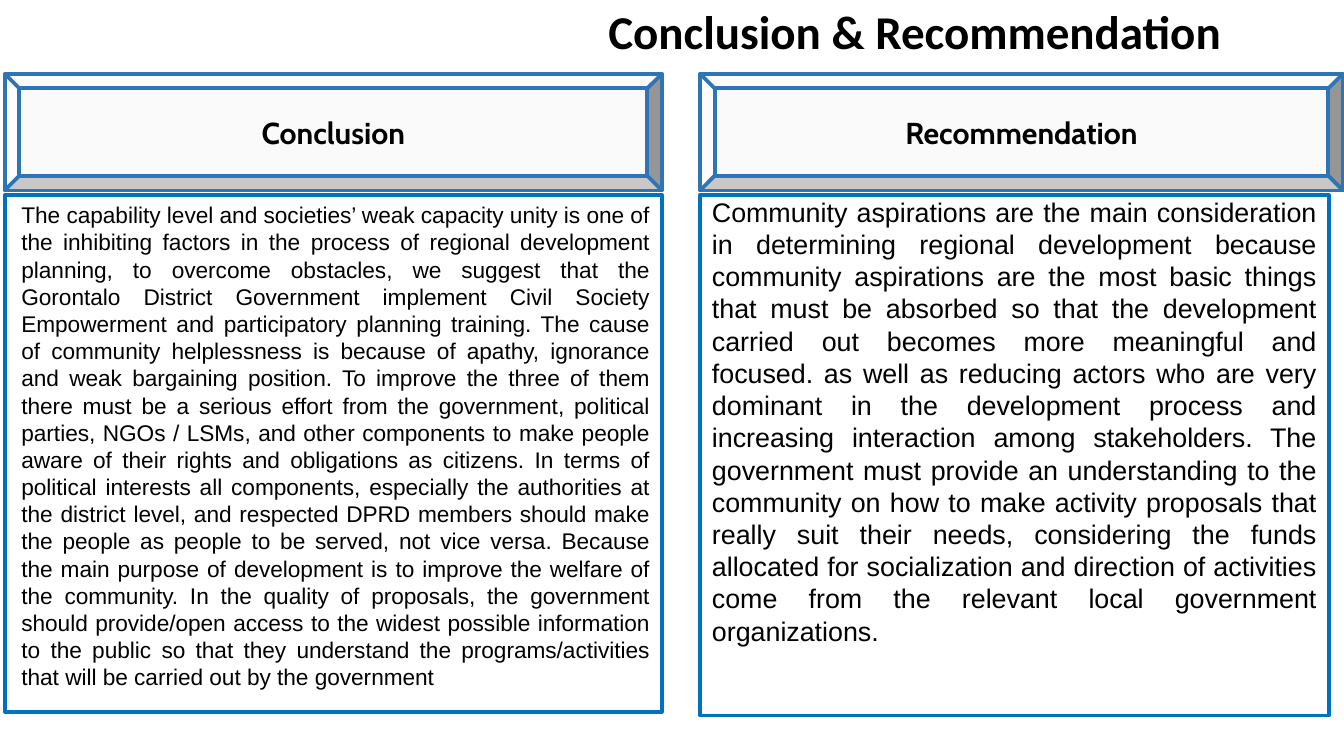
from pptx import Presentation
from pptx.dml.color import RGBColor
from pptx.enum.shapes import MSO_SHAPE
from pptx.enum.text import MSO_ANCHOR, MSO_AUTO_SIZE, PP_ALIGN
from pptx.util import Cm, Pt

RECT, BEVEL = MSO_SHAPE.RECTANGLE, MSO_SHAPE.BEVEL
TOP, MIDDLE = MSO_ANCHOR.TOP, MSO_ANCHOR.MIDDLE
GROW, FIXED = MSO_AUTO_SIZE.SHAPE_TO_FIT_TEXT, MSO_AUTO_SIZE.NONE
LEFT, CENTER, JUSTIFY = PP_ALIGN.LEFT, PP_ALIGN.CENTER, PP_ALIGN.JUSTIFY

COLORS = {"text": "000000", "panel": "FFFFFF", "frame": "0070C0",
          "head": "FAFAFA", "edge": "2E75B6"}

CONCLUSION = [
    "The capability level and societies’ weak capacity unity is one of the "
    "inhibiting factors in the process of regional development planning, to "
    "overcome obstacles, we suggest that the Gorontalo District Government "
    "implement Civil Society Empowerment and participatory planning training.",
    "The cause of community helplessness is because of apathy, ignorance and "
    "weak bargaining position.",
    "To improve the three of them there must be a serious effort from the "
    "government, political parties, NGOs / LSMs, and other components to make "
    "people aware of their rights and obligations as citizens.",
    "In terms of political interests all components, especially the "
    "authorities at the district level, and respected DPRD members should make "
    "the people as people to be served, not vice versa.",
    "Because the main purpose of development is to improve the welfare of the "
    "community.",
    "In the quality of proposals, the government should provide/open access to "
    "the widest possible information to the public so that they understand the "
    "programs/activities that will be carried out by the government",
]
ADVICE = [
    "Community aspirations are the main consideration in determining regional "
    "development because community aspirations are the most basic things that "
    "must be absorbed so that the development carried out becomes more "
    "meaningful and focused.",
    "as well as reducing actors who are very dominant in the development "
    "process and increasing interaction among stakeholders.",
    "The government must provide an understanding to the community on how to "
    "make activity proposals that really suit their needs, considering the "
    "funds allocated for socialization and direction of activities come from "
    "the relevant local government organizations.",
]


def color(name):
    return RGBColor.from_string(COLORS[name])


def cms(box):
    return [Cm(n) for n in box]


def write(shape, text, font, size, bold, align, anchor, fit=FIXED):
    frame = shape.text_frame
    frame.word_wrap = True
    frame.auto_size = fit
    frame.vertical_anchor = anchor
    para = frame.paragraphs[0]
    para.alignment = align
    run = para.add_run()
    run.text = text
    run.font.name, run.font.size, run.font.bold = font, Pt(size), bold
    run.font.color.rgb = color("text")
    return para


def add_block(slide, kind, box, fill, line):
    block = slide.shapes.add_shape(kind, *cms(box))
    block.shadow.inherit = False
    block.fill.solid()
    block.fill.fore_color.rgb = color(fill)
    block.line.color.rgb = color(line)
    block.line.width = Pt(2.25)
    return block


def add_title(slide, box, text):
    title = slide.shapes.title
    title.left, title.top, title.width, title.height = cms(box)
    para = write(title, text, "Calibri", 28, True, LEFT, MIDDLE)
    para.line_spacing = 0.9


def add_column(slide, box, head, wide, body, size, shift):
    """Panel under a bevelled head of width wide; shift moves the body text."""
    left, top, width, height = box
    gap, tall = 0.1, 2.45
    low = top + tall + gap
    deep = height - tall - gap
    add_block(slide, RECT, (left, low, width, deep), "panel", "frame")
    bevel = add_block(slide, BEVEL, (left, top, wide, tall), "head", "edge")
    write(bevel, head, "Cabin", 18, True, CENTER, MIDDLE)
    right, down = shift
    note = slide.shapes.add_textbox(
        *cms((left + right, low + down, width - right, deep)))
    write(note, " ".join(body), "Arial", size, False, JUSTIFY, TOP, GROW)


def main():
    deck = Presentation()
    deck.slide_width, deck.slide_height = Cm(28.22), Cm(15.88)
    slide = deck.slides.add_slide(deck.slide_layouts[5])
    add_title(slide, (12.52, 0, 15.7, 1.42), "Conclusion & Recommendation")
    add_column(slide, (0.1, 1.55, 13.8, 13.4), "Conclusion", 13.8,
               CONCLUSION, 13.5, (0.1, 0))
    add_column(slide, (14.7, 1.55, 13.2, 13.48), "Recommendation", 13.5,
               ADVICE, 16, (0, -0.12))
    deck.save("out.pptx")


if __name__ == "__main__":
    main()
